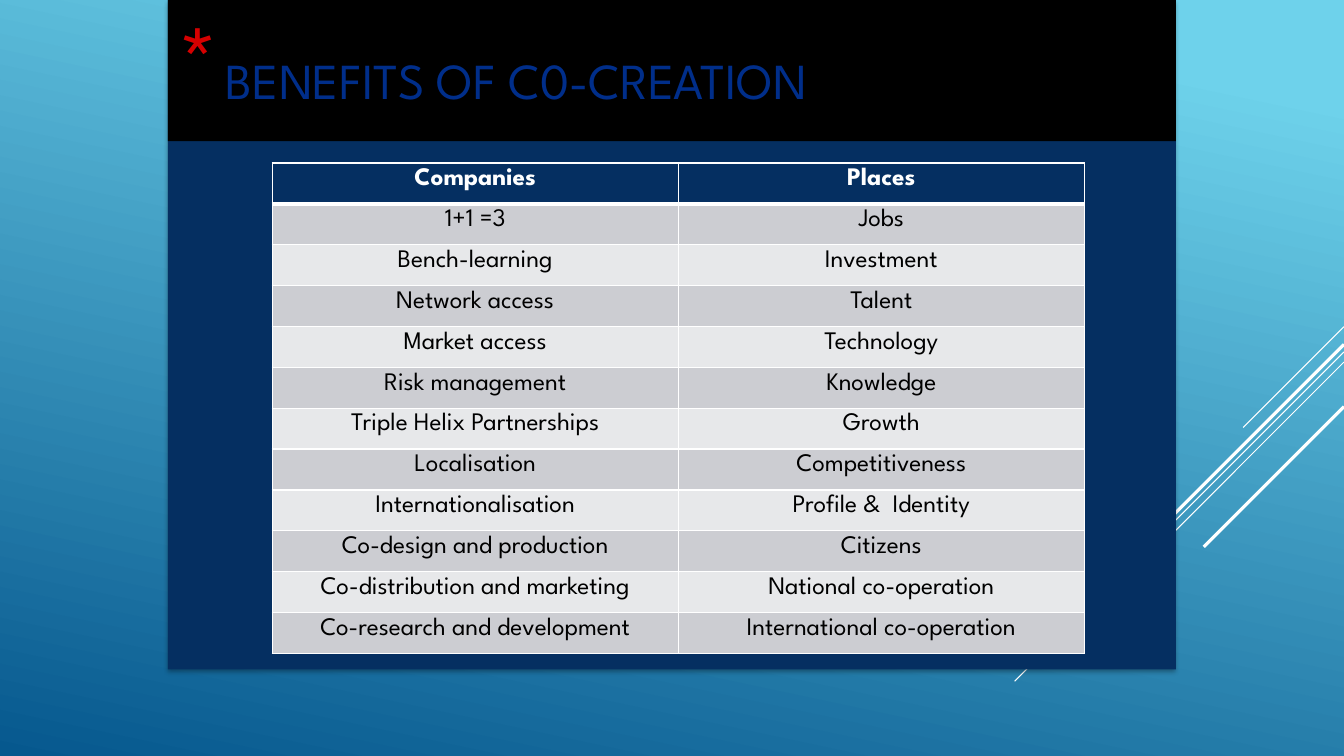
"""Build the slide that lists the benefits of co-creation for companies and places."""
from dataclasses import dataclass

from lxml.etree import SubElement
from pptx import Presentation
from pptx.dml.color import RGBColor
from pptx.enum.shapes import MSO_CONNECTOR, MSO_SHAPE
from pptx.enum.text import MSO_ANCHOR, MSO_AUTO_SIZE, PP_ALIGN
from pptx.oxml import parse_xml
from pptx.oxml.ns import nsdecls, qn
from pptx.util import Inches, Pt


@dataclass(frozen=True)
class Theme:
    font: str = "League Spartan"
    white: str = "FFFFFF"
    black: str = "000000"
    navy: str = "052F61"
    title: str = "002E8A"
    red: str = "D60000"
    sky: str = "6ED2EB"
    ocean: str = "06588E"
    bands: tuple = ("E7E8EA", "CCCDD2")
    title_size: int = 36
    star_size: int = 72
    table_size: int = 18
    border: int = 1
    header_border: int = 3


theme = Theme()
presentation = Presentation()
presentation.slide_width = Inches(13.33)
presentation.slide_height = Inches(7.5)
column = presentation.slide_width / 16
row = presentation.slide_height / 9


def on_grid(left, top, width, height):
    return [int(left * column), int(top * row), int(width * column), int(height * row)]


def write_text(frame, text, size, color, bold=False, align=PP_ALIGN.LEFT, anchor=MSO_ANCHOR.TOP):
    frame.word_wrap = True
    frame.vertical_anchor = anchor
    paragraph = frame.paragraphs[0]
    paragraph.alignment = align
    run = paragraph.add_run()
    run.text = text
    run.font.name = theme.font
    run.font.size = Pt(size)
    run.font.bold = bold
    run.font.color.rgb = RGBColor.from_string(color)


slide = presentation.slides.add_slide(presentation.slide_layouts[5])
background = slide.background.fill
background.gradient()
background.gradient_angle = 258
for stop, position, color in zip(background.gradient_stops, (0.1, 1), (theme.sky, theme.ocean)):
    stop.position = position
    stop.color.rgb = RGBColor.from_string(color)

diagonals = [(3.89, 1.2, 0.75), (4.19, 3.92, 0.75), (4.31, 2.49, 0.75), (4.1, 2.3, 2.25), (4.84, 1.67, 2.25)]
for top, reach, weight in diagonals:
    left, start, width, height = on_grid(16 - reach, top, reach, reach)
    diagonal = slide.shapes.add_connector(
        MSO_CONNECTOR.STRAIGHT, left + width, start, left, start + height)
    diagonal.line.color.rgb = RGBColor.from_string(theme.white)
    diagonal.line.width = Pt(weight)
    SubElement(diagonal.element.spPr, qn("a:effectLst"))

for height, color in [(7.97, theme.navy), (1.68, theme.black)]:
    panel = slide.shapes.add_shape(MSO_SHAPE.RECTANGLE, *on_grid(2, 0, 12, height))
    panel.fill.solid()
    panel.fill.fore_color.rgb = RGBColor.from_string(color)
    panel.line.fill.background()
    panel.shadow.inherit = False
    if color == theme.navy:
        panel.element.spPr.find(qn("a:effectLst")).append(parse_xml(
            f'<a:outerShdw {nsdecls("a")} blurRad="{Pt(3.5)}" dist="{Pt(2.2)}" dir="5400000" '
            f'algn="t" rotWithShape="0"><a:srgbClr val="{theme.black}">'
            '<a:alpha val="32000"/></a:srgbClr></a:outerShdw>'))

title = slide.shapes.title
title.left, title.top, title.width, title.height = on_grid(2.57, 0.19, 10.8, 1.5)
title.text_frame.auto_size = MSO_AUTO_SIZE.NONE
write_text(title.text_frame, "BENEFITS OF C0-CREATION", theme.title_size, theme.title,
           anchor=MSO_ANCHOR.MIDDLE)
panel.element.addnext(title.element)

star = slide.shapes.add_textbox(*on_grid(2, -0.1, 0.84, 1.57))
write_text(star.text_frame, "*", theme.star_size, theme.red)

benefits = [
    ("Companies", "Places"),
    ("1+1 =3", "Jobs"),
    ("Bench-learning", "Investment"),
    ("Network access", "Talent"),
    ("Market access", "Technology"),
    ("Risk management", "Knowledge"),
    ("Triple Helix Partnerships", "Growth"),
    ("Localisation", "Competitiveness"),
    ("Internationalisation", "Profile &  Identity"),
    ("Co-design and production", "Citizens"),
    ("Co-distribution and marketing", "National co-operation"),
    ("Co-research and development", "International co-operation"),
]
table = slide.shapes.add_table(len(benefits), 2, *on_grid(3.24, 1.94, 9.67, 5.84)).table
for row_index, entries in enumerate(benefits):
    header = row_index == 0
    for column_index, entry in enumerate(entries):
        cell = table.cell(row_index, column_index)
        write_text(cell.text_frame, entry, theme.table_size,
                   theme.white if header else theme.black, bold=header, align=PP_ALIGN.CENTER)
        properties = cell._tc.get_or_add_tcPr()
        for side in "LRTB":
            thick = (row_index, side) in [(0, "B"), (1, "T")]
            weight = theme.header_border if thick else theme.border
            properties.append(parse_xml(
                f'<a:ln{side} {nsdecls("a")} w="{Pt(weight)}"><a:solidFill>'
                f'<a:srgbClr val="{theme.white}"/></a:solidFill></a:ln{side}>'))
        cell.fill.solid()
        cell.fill.fore_color.rgb = RGBColor.from_string(
            theme.navy if header else theme.bands[row_index % 2])

presentation.save("out.pptx")
